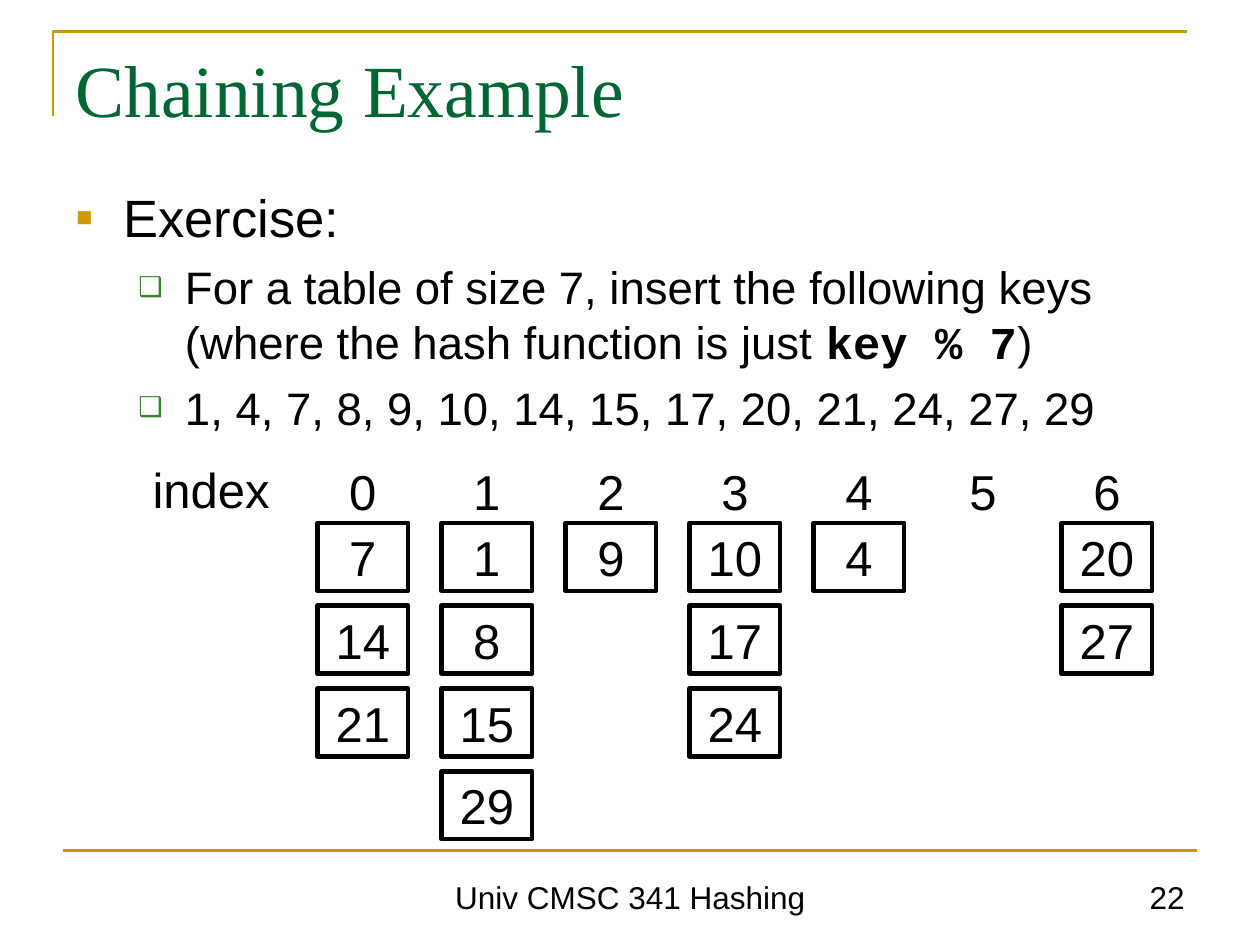
from lxml import etree
from pptx import Presentation
from pptx import util as u
from pptx.dml.color import RGBColor
from pptx.enum import shapes, text
from pptx.oxml.ns import qn

GOLD = RGBColor(0xCC, 0x99, 0x00)
GREEN = RGBColor(0x00, 0x66, 0x33)
LEAF = RGBColor(0x3B, 0x81, 0x2F)
BLACK = RGBColor(0x00, 0x00, 0x00)
LEFT, CENTER, RIGHT = text.PP_ALIGN.LEFT, text.PP_ALIGN.CENTER, text.PP_ALIGN.RIGHT
TOP, MIDDLE, BOTTOM = text.MSO_ANCHOR.TOP, text.MSO_ANCHOR.MIDDLE, text.MSO_ANCHOR.BOTTOM

prs = Presentation()
prs.slide_width, prs.slide_height = u.Cm(25.4), u.Cm(19.05)
s = prs.slides.add_slide(prs.slide_layouts[6])


def add_text(txt, box, size=28, font="Arial", color=BLACK, align=CENTER,
             anchor=MIDDLE, inset=(0, 0), border=False):
    at = [u.Cm(v) for v in box]
    if border:
        sp = s.shapes.add_shape(shapes.MSO_SHAPE.RECTANGLE, *at)
        sp.shadow.inherit = False
        sp.fill.background()
        sp.line.color.rgb = BLACK
        sp.line.width = u.Pt(2.5)
    else:
        sp = s.shapes.add_textbox(*at)
    tf = sp.text_frame
    tf.word_wrap = True
    tf.vertical_anchor = anchor
    tf.margin_left = tf.margin_right = u.Cm(inset[0])
    tf.margin_top = tf.margin_bottom = u.Cm(inset[1])
    p = tf.paragraphs[0]
    p.alignment = align
    r = p.add_run()
    r.text = txt
    r.font.size, r.font.name, r.font.color.rgb = u.Pt(size), font, color
    return tf


fb = s.shapes.build_freeform(u.Cm(1.07), u.Cm(2.34))
fb.add_line_segments([(u.Cm(1.07), u.Cm(0.64)), (u.Cm(23.93), u.Cm(0.64))], close=False)
corner = fb.convert_to_shape()
corner.shadow.inherit = False
corner.fill.background()
rule = s.shapes.add_connector(
    shapes.MSO_CONNECTOR.STRAIGHT, u.Cm(1.27), u.Cm(17.15), u.Cm(24.13), u.Cm(17.15))
etree.SubElement(rule._element.spPr, qn("a:effectLst"))
for sp in (corner, rule):
    sp.line.color.rgb = GOLD
    sp.line.width = u.Pt(1.5)

PAD = (0.25, 0.13)
add_text("Chaining Example", (1.27, 0.76, 22.83, 2.82), size=42, font="Times New Roman",
         color=GREEN, align=LEFT, anchor=TOP, inset=PAD)
tf = add_text("Exercise:", (1.27, 3.6, 22.83, 13.4), size=30, align=LEFT, anchor=TOP, inset=PAD)

items = [
    [("For a table of size 7, insert the following keys (where the hash function is just ", "Arial"),
     ("key % 7", "Courier New"), (")", "Arial")],
    [("1, 4, 7, 8, 9, 10, 14, 15, 17, 20, 21, 24, 27, 29", "Arial")],
]
for runs in items:
    p = tf.add_paragraph()
    p.level = 1
    for txt, font in runs:
        r = p.add_run()
        r.text = txt
        r.font.size, r.font.name, r.font.color.rgb = u.Pt(26), font, BLACK
        r.font.bold = font == "Courier New"

bullets = [("▪", GOLD, 100, 0.97, 0.97, 7.5)] + [("❑", LEAF, 60, 2.21, 0.94, 6.5)] * 2
for p, (char, color, pct, margin, hang, before) in zip(tf.paragraphs, bullets):
    p.space_before = u.Pt(before)
    pPr = p._p.get_or_add_pPr()
    pPr.set("marL", str(u.Cm(margin)))
    pPr.set("indent", str(-u.Cm(hang)))
    clr = etree.SubElement(pPr, qn("a:buClr"))
    etree.SubElement(clr, qn("a:srgbClr"), val=str(color))
    etree.SubElement(pPr, qn("a:buSzPct"), val=str(pct * 1000))
    etree.SubElement(pPr, qn("a:buFont"), typeface="Arial")
    etree.SubElement(pPr, qn("a:buChar"), char=char)

add_text("Univ CMSC 341 Hashing", (4.45, 17.35, 16.51, 1.24), size=18, anchor=BOTTOM, inset=PAD)
add_text("22", (18.21, 17.35, 5.92, 1.24), size=18, align=RIGHT, anchor=BOTTOM, inset=PAD)

add_text("index", (2.77, 9.17, 2.97, 1.37))
chains = [[7, 14, 21], [1, 8, 15, 29], [9], [10, 17, 24], [4], [], [20, 27]]
for index, chain in enumerate(chains):
    x = 6.4 + 2.5 * index
    add_text(str(index), (x, 9.22, 1.83, 1.37))
    for row, key in enumerate(chain):
        add_text(str(key), (x, 10.54 + 1.67 * row, 1.83, 1.37), border=True)

prs.save("out.pptx")
